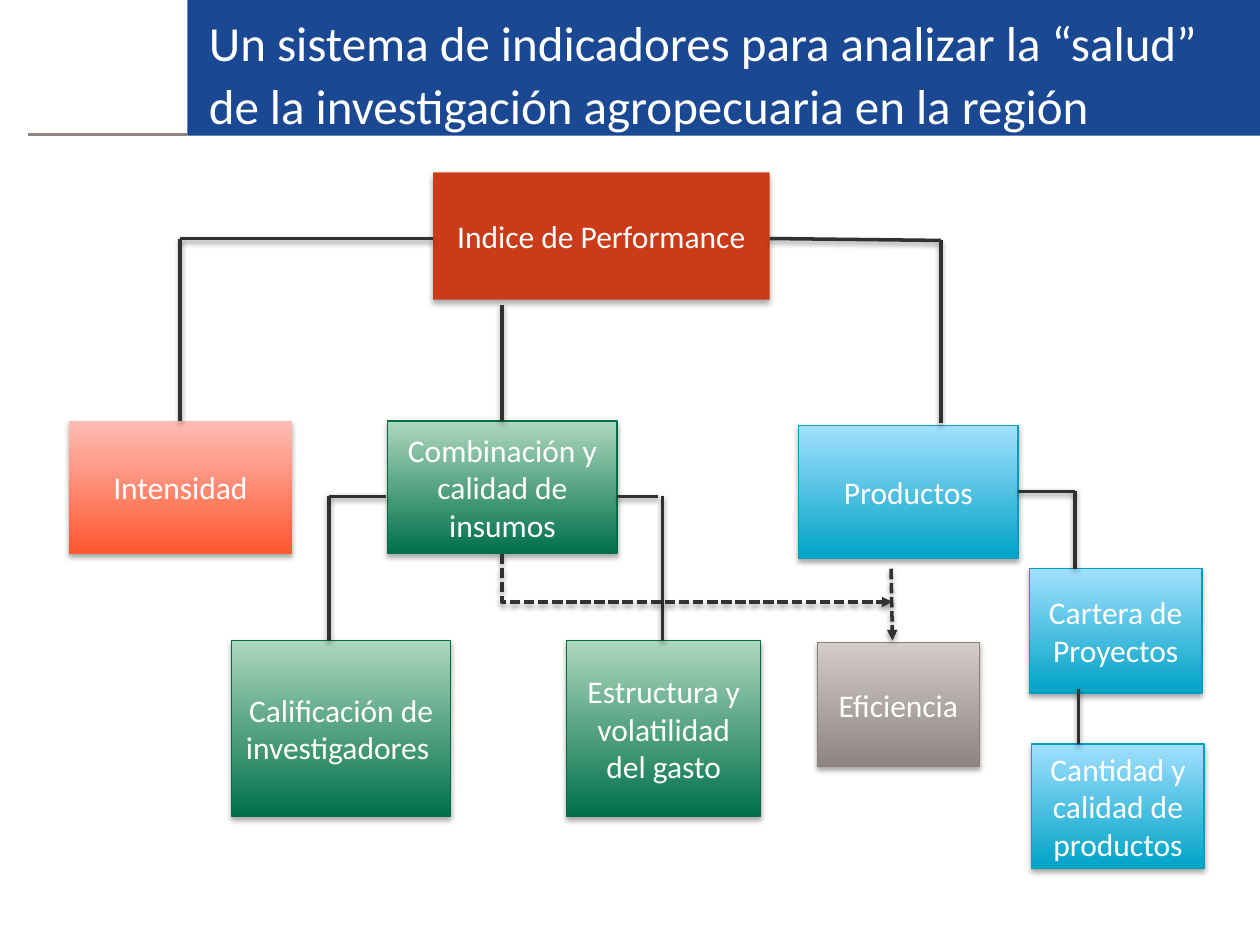
from lxml.etree import SubElement
from pptx import Presentation
from pptx.dml.color import RGBColor
from pptx.enum.dml import MSO_LINE
from pptx.enum.shapes import MSO_CONNECTOR, MSO_SHAPE
from pptx.enum.text import MSO_ANCHOR, PP_ALIGN
from pptx.oxml.ns import qn
from pptx.util import Pt

WHITE = RGBColor(0xFF, 0xFF, 0xFE)
NAVY = RGBColor(0x1B, 0x48, 0x92)
GRAY = RGBColor(0x8C, 0x85, 0x84)
INK = RGBColor(0x31, 0x31, 0x30)
RUST = RGBColor(0xC9, 0x3B, 0x19)

# Gradient palettes: bottom colour, top colour, outline
CORAL = (RGBColor(0xFF, 0x57, 0x2F), RGBColor(0xFF, 0xBD, 0xB6), None)
CYAN = (RGBColor(0x00, 0xA3, 0xC6), RGBColor(0xA2, 0xE0, 0xFF), RGBColor(0x00, 0x9F, 0xC2))
GREEN = (RGBColor(0x00, 0x70, 0x4A), RGBColor(0xAE, 0xD7, 0xBE), RGBColor(0x00, 0x6E, 0x48))
STONE = (RGBColor(0x8D, 0x84, 0x83), RGBColor(0xD3, 0xCC, 0xCB), RGBColor(0x89, 0x82, 0x81))


def write(frame, text, size=18, align=PP_ALIGN.CENTER, anchor=MSO_ANCHOR.MIDDLE,
          spacing=None, after=None):
    frame.word_wrap = True
    frame.vertical_anchor = anchor
    paragraph = frame.paragraphs[0]
    paragraph.alignment = align
    paragraph.line_spacing = spacing
    paragraph.space_after = after
    run = paragraph.add_run()
    run.text = text
    run.font.size = Pt(size)
    run.font.name = "Calibri"
    run.font.color.rgb = WHITE


def add_shadow(effects, opacity, blur, distance):
    """Put a black shadow that falls straight down into an effect list."""
    shadow = SubElement(effects, qn("a:outerShdw"), blurRad=str(Pt(blur)),
                        dist=str(Pt(distance)), dir="5400000", rotWithShape="0")
    black = SubElement(shadow, qn("a:srgbClr"), val="000000")
    SubElement(black, qn("a:alpha"), val=str(opacity * 1000))


class Diagram:
    """Holds the style and the current slide."""

    line_width = 2
    outline_width = 0.75

    def __init__(self, slide):
        self.slide = slide
        slide.background.fill.solid()
        slide.background.fill.fore_color.rgb = WHITE

    def block(self, left, top, width, height, color):
        block = self.slide.shapes.add_shape(
            MSO_SHAPE.RECTANGLE, Pt(left), Pt(top), Pt(width), Pt(height))
        block.shadow.inherit = False
        block.fill.solid()
        block.fill.fore_color.rgb = color
        block.line.fill.background()
        return block

    def node(self, text, left, top, width, height, palette=None):
        """A labelled box: a gradient palette, or plain rust without one."""
        node = self.block(left, top, width, height, RUST)
        if palette:
            bottom, upper, outline = palette
            node.fill.gradient()
            node.fill.gradient_angle = 90
            for stop, color, position in zip(node.fill.gradient_stops, (bottom, upper), (0, 1)):
                stop.color.rgb = color
                stop.position = position
            if outline:
                node.line.color.rgb = outline
                node.line.width = Pt(self.outline_width)
        effects = node._element.spPr.find(qn("a:effectLst"))
        add_shadow(effects, *((35, 3.1, 1.8) if palette else (32, 3.5, 2.2)))
        write(node.text_frame, text)

    def title(self, text, left, top, width, height):
        box = self.slide.shapes.add_textbox(Pt(left), Pt(top), Pt(width), Pt(height))
        write(box.text_frame, text, size=28, align=PP_ALIGN.LEFT,
              anchor=MSO_ANCHOR.TOP, spacing=1.07, after=Pt(8))

    def line(self, x1, y1, x2, y2, color=INK, width=line_width, shadow=True, arrow=False):
        line = self.slide.shapes.add_connector(
            MSO_CONNECTOR.STRAIGHT, Pt(x1), Pt(y1), Pt(x2), Pt(y2))
        line.line.color.rgb = color
        line.line.width = Pt(width)
        if arrow:
            line.line.dash_style = MSO_LINE.SQUARE_DOT
            SubElement(line.line._get_or_add_ln(), qn("a:tailEnd"), type="triangle")
        effects = SubElement(line._element.spPr, qn("a:effectLst"))
        if shadow:
            add_shadow(effects, 38, 3.1, 1.6)
        return line

    def elbow_arrow(self, x1, y1, x2, y2):
        """A dashed arrow that goes down, then right, with a single bend."""
        arrow = self.line(x1, y1, x2, y2, arrow=True)
        across, down = x2 - x1, y2 - y1
        arrow.left, arrow.top = Pt((x1 + x2 - down) / 2), Pt((y1 + y2 - across) / 2)
        arrow.width, arrow.height = Pt(down), Pt(across)
        properties = arrow._element.spPr
        properties.find(qn("a:prstGeom")).set("prst", "bentConnector2")
        frame = properties.find(qn("a:xfrm"))
        frame.set("rot", "16200000")
        frame.set("flipH", "1")


def main():
    deck = Presentation()
    deck.slide_width, deck.slide_height = Pt(720), Pt(540)
    diagram = Diagram(deck.slides.add_slide(deck.slide_layouts[6]))

    diagram.block(107, 0, 613, 77.5, NAVY)
    diagram.line(107, 77, 16, 77, color=GRAY, width=1.5, shadow=False)
    diagram.title("Un sistema de indicadores para analizar la “salud” "
                  "de la investigación agropecuaria en la región", 112.3, 1.4, 607.7, 80)

    nodes = [
        ("Indice de Performance", 247.5, 98.5, 192.3, 72.8, None),
        ("Intensidad", 39.4, 240.6, 127.5, 75.7, CORAL),
        ("Combinación y calidad de insumos", 221.6, 240.6, 131, 75.7, GREEN),
        ("Productos", 456.3, 243.2, 125.5, 75.7, CYAN),
        ("Calificación de investigadores ", 132.3, 366, 125.3, 100.5, GREEN),
        ("Estructura y volatilidad del gasto", 323.9, 366, 110.9, 100.5, GREEN),
        ("Eficiencia", 467.2, 367.2, 92.4, 71, STONE),
        ("Cartera de Proyectos", 588.3, 325, 98.5, 71, CYAN),
        ("Cantidad y calidad de productos", 589.6, 425.2, 98.5, 71, CYAN),
    ]
    for node in nodes:
        diagram.node(*node)

    branches = [
        (103, 136.3, 247.5, 136.3), (103, 136.3, 103, 240.6),
        (439.8, 136.3, 537.6, 137.4), (537.6, 137.4, 537.6, 242),
        (286.8, 174.5, 286.8, 240.6),
        (188, 283.6, 220.6, 283.6), (188, 283.6, 188, 366),
        (352.6, 283.8, 376, 283.8), (378.6, 283.6, 378.6, 366),
        (581.8, 280.8, 614.3, 280.8), (614.3, 280.8, 614.3, 325),
        (616.4, 393.8, 616.4, 425.2),
    ]
    for branch in branches:
        diagram.line(*branch)
    diagram.line(509.2, 325, 510, 366, arrow=True)
    diagram.elbow_arrow(286.8, 316.3, 510, 344)

    deck.save("out.pptx")


if __name__ == "__main__":
    main()
